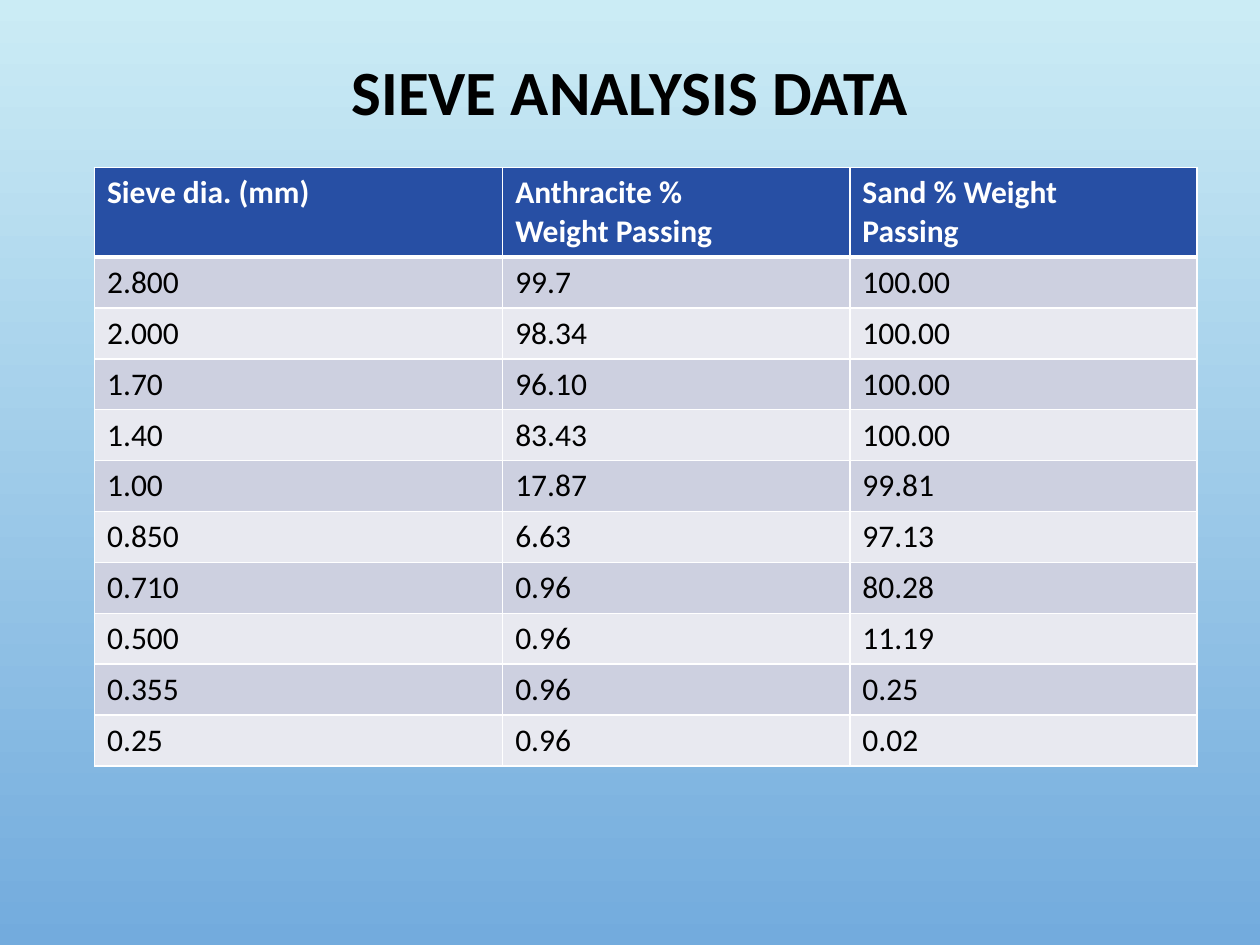
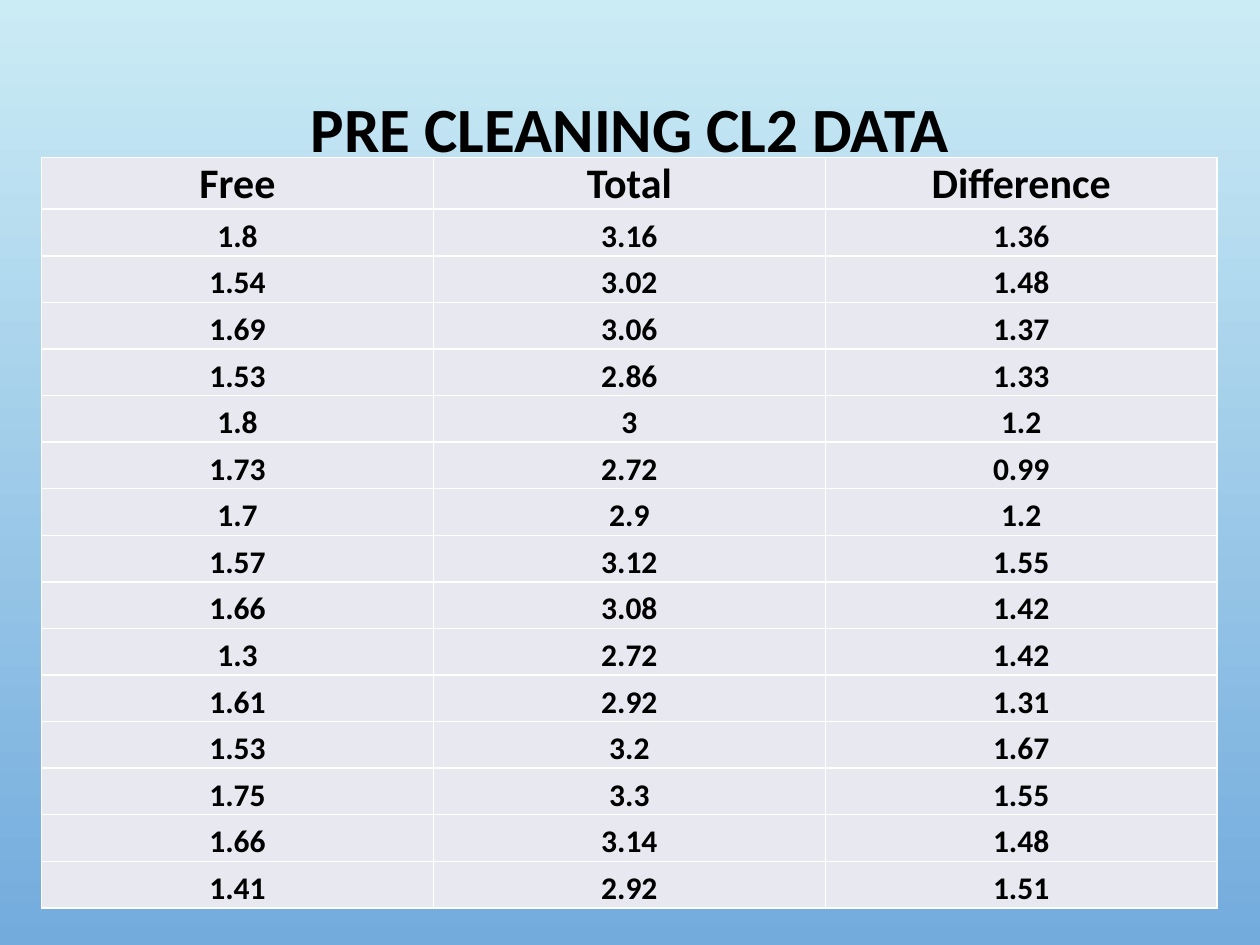
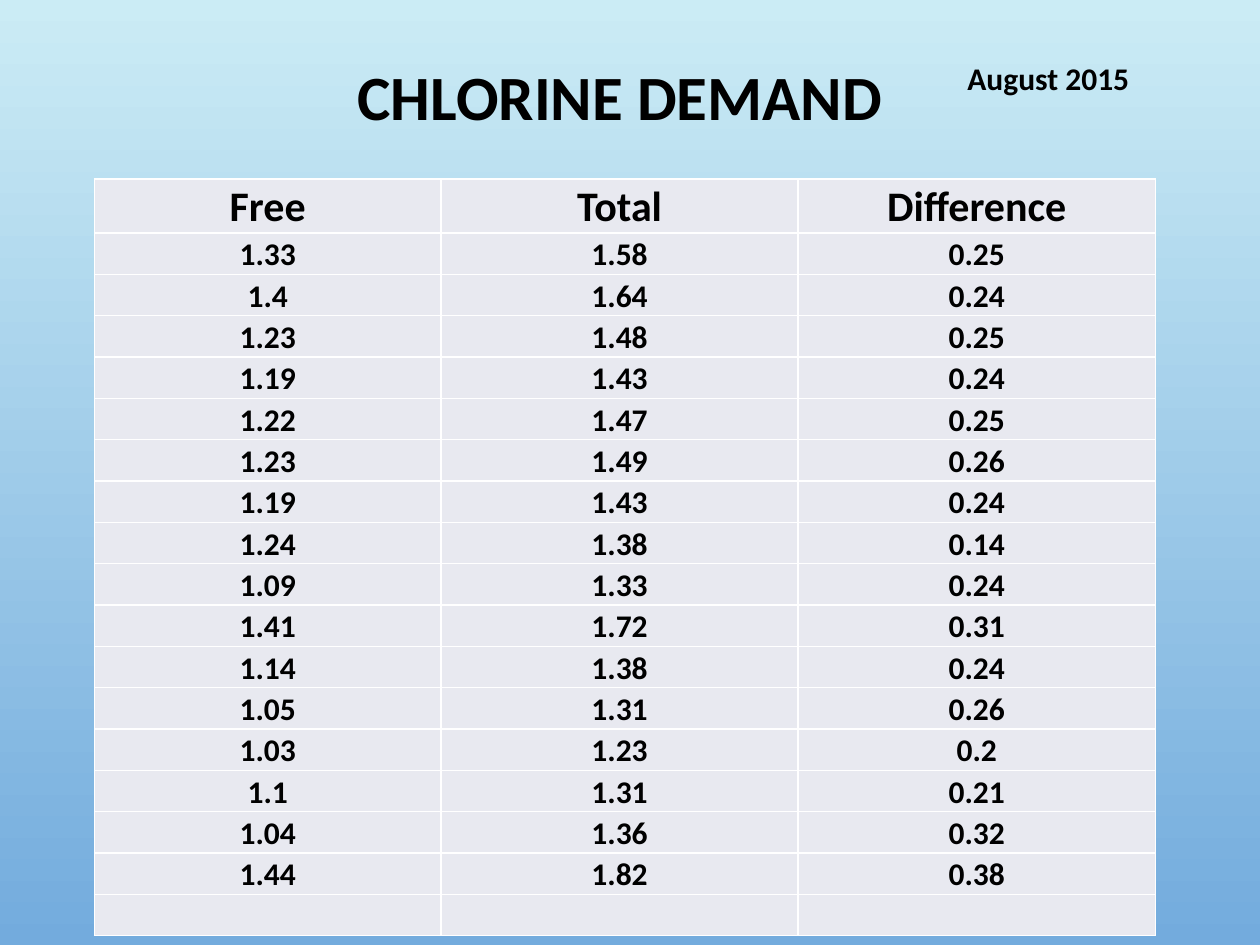
from dataclasses import dataclass

from lxml.etree import SubElement
from pptx import Presentation
from pptx.dml.color import RGBColor as Rgb
from pptx.enum.text import MSO_ANCHOR as Anchor, PP_ALIGN as Align
from pptx.oxml.ns import qn
from pptx.util import Inches, Pt


@dataclass(frozen=True)
class Theme:
    font: str = "Calibri"
    sky_top: str = "CBECF5"
    sky_bottom: str = "73ABDD"
    ink: str = "000000"
    white: str = "FFFFFF"
    header_blue: str = "274FA4"
    band_dark: str = "CDD0E0"
    band_light: str = "E8E9F0"
    title_size: int = 36
    heading_size: int = 24
    body_size: int = 18
    grid_width: int = 1
    header_rule: int = 3


THEME = Theme()

SIEVE_HEADER = ["Sieve dia. (mm)", "Anthracite %\nWeight Passing", "Sand % Weight\nPassing"]
SIEVE_ROWS = """
2.800 99.7 100.00
2.000 98.34 100.00
1.70 96.10 100.00
1.40 83.43 100.00
1.00 17.87 99.81
0.850 6.63 97.13
0.710 0.96 80.28
0.500 0.96 11.19
0.355 0.96 0.25
0.25 0.96 0.02
"""

CHLORINE_HEADER = ["Free", "Total", "Difference"]
PRE_CLEANING_ROWS = """
1.8 3.16 1.36
1.54 3.02 1.48
1.69 3.06 1.37
1.53 2.86 1.33
1.8 3 1.2
1.73 2.72 0.99
1.7 2.9 1.2
1.57 3.12 1.55
1.66 3.08 1.42
1.3 2.72 1.42
1.61 2.92 1.31
1.53 3.2 1.67
1.75 3.3 1.55
1.66 3.14 1.48
1.41 2.92 1.51
"""
DEMAND_ROWS = """
1.33 1.58 0.25
1.4 1.64 0.24
1.23 1.48 0.25
1.19 1.43 0.24
1.22 1.47 0.25
1.23 1.49 0.26
1.19 1.43 0.24
1.24 1.38 0.14
1.09 1.33 0.24
1.41 1.72 0.31
1.14 1.38 0.24
1.05 1.31 0.26
1.03 1.23 0.2
1.1 1.31 0.21
1.04 1.36 0.32
1.44 1.82 0.38
"""


def parse_rows(block):
    return [line.split() for line in block.strip().splitlines()]


def style_text(frame, size, color=THEME.ink, bold=True, align=Align.LEFT):
    for paragraph in frame.paragraphs:
        paragraph.alignment = align
        for run in paragraph.runs:
            run.font.name = THEME.font
            run.font.size = Pt(size)
            run.font.bold = bold
            run.font.color.rgb = Rgb.from_string(color)


def paint_background(master):
    fill = master.background.fill
    fill.gradient()
    fill.gradient_angle = 270
    for stop, color in zip(fill.gradient_stops, (THEME.sky_top, THEME.sky_bottom)):
        stop.color.rgb = Rgb.from_string(color)


def add_label(slide, box, text, size, align=Align.LEFT, anchor=Anchor.TOP):
    frame = slide.shapes.add_textbox(*map(Inches, box)).text_frame
    frame.word_wrap = True
    frame.vertical_anchor = anchor
    frame.text = text
    style_text(frame, size, align=align)
    return frame


def add_title(slide, box, text):
    frame = add_label(slide, box, text, THEME.title_size, Align.CENTER, Anchor.MIDDLE)
    frame.paragraphs[0].line_spacing = 0.9


def set_borders(cell, top=THEME.grid_width, bottom=THEME.grid_width):
    """Draw white cell edges; top and bottom are line widths in points."""
    properties = cell._tc.get_or_add_tcPr()
    side = THEME.grid_width
    for tag, width in (("lnL", side), ("lnR", side), ("lnT", top), ("lnB", bottom)):
        line = SubElement(properties, qn(f"a:{tag}"), w=str(Pt(width)))
        SubElement(SubElement(line, qn("a:solidFill")), qn("a:srgbClr"), val=THEME.white)


def set_fill(cell, color):
    cell.fill.solid()
    cell.fill.fore_color.rgb = Rgb.from_string(color)


def add_grid(slide, box, rows, first_column, header_height):
    """Fill the box with a table whose later columns, and later rows, are equal."""
    width, height = box[2:]
    row_count, column_count = len(rows), len(rows[0])
    table = slide.shapes.add_table(row_count, column_count, *map(Inches, box)).table
    table.first_row = table.horz_banding = False
    for index, column in enumerate(table.columns):
        shared = (width - first_column) / (column_count - 1)
        column.width = Inches(shared if index else first_column)
    for index, row in enumerate(table.rows):
        shared = (height - header_height) / (row_count - 1)
        row.height = Inches(shared if index else header_height)
    for row, values in zip(table.rows, rows):
        for cell, value in zip(row.cells, values):
            cell.text = value
    return table


def add_sieve_table(slide, box):
    rows = [SIEVE_HEADER, *parse_rows(SIEVE_ROWS)]
    table = add_grid(slide, box, rows, first_column=3.24, header_height=0.71)
    for index, row in enumerate(table.rows):
        is_header = index == 0
        band = THEME.band_dark if index % 2 else THEME.band_light
        for cell in row.cells:
            set_borders(cell,
                        top=THEME.header_rule if index == 1 else THEME.grid_width,
                        bottom=THEME.header_rule if is_header else THEME.grid_width)
            set_fill(cell, THEME.header_blue if is_header else band)
            style_text(cell.text_frame, THEME.body_size,
                       THEME.white if is_header else THEME.ink, bold=is_header)


def add_chlorine_table(slide, box, readings, first_column, header_height):
    table = add_grid(slide, box, [CHLORINE_HEADER, *readings], first_column, header_height)
    for index, row in enumerate(table.rows):
        for cell in row.cells:
            cell.vertical_anchor = Anchor.BOTTOM
            cell.margin_left = cell.margin_right = cell.margin_top = Inches(0.01)
            cell.margin_bottom = 0
            set_borders(cell)
            set_fill(cell, THEME.band_light)
            style_text(cell.text_frame, THEME.body_size if index else THEME.heading_size,
                       align=Align.CENTER)


def build_sieve_slide(slide):
    add_title(slide, (0.75, 0.42, 8.5, 0.67), "SIEVE ANALYSIS DATA")
    add_sieve_table(slide, (0.75, 1.33, 8.75, 4.75))


def build_pre_cleaning_slide(slide):
    add_title(slide, (0.75, 0.68, 8.5, 0.74), "PRE CLEANING CL2 DATA")
    add_chlorine_table(slide, (0.33, 1.25, 9.33, 5.96), parse_rows(PRE_CLEANING_ROWS),
                       first_column=3.11, header_height=0.41)


def build_demand_slide(slide):
    add_title(slide, (0.67, 0.17, 8.5, 1.25), "CHLORINE DEMAND")
    unfilled = [""] * len(CHLORINE_HEADER)
    add_chlorine_table(slide, (0.75, 1.42, 8.42, 6.01), [*parse_rows(DEMAND_ROWS), unfilled],
                       first_column=2.75, header_height=0.43)
    add_label(slide, (7.58, 0.42, 2.17, 0.4), "August 2015", THEME.body_size)


def main():
    deck = Presentation()
    deck.slide_width, deck.slide_height = Inches(10), Inches(7.5)
    paint_background(deck.slide_master)
    blank = deck.slide_layouts[6]
    for build in (build_sieve_slide, build_pre_cleaning_slide, build_demand_slide):
        build(deck.slides.add_slide(blank))
    deck.save("out.pptx")


if __name__ == "__main__":
    main()
